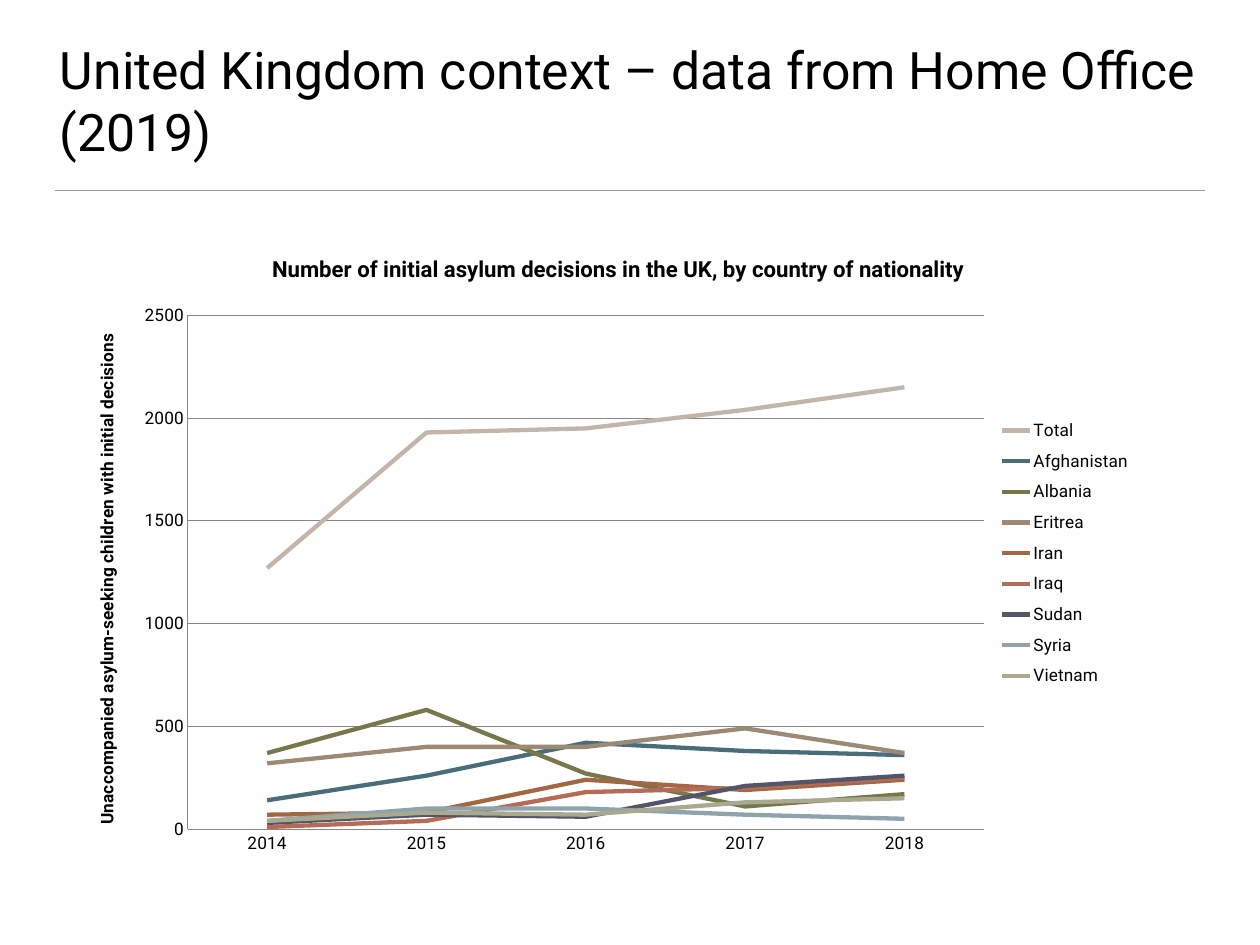
from lxml.etree import SubElement
from pptx import Presentation
from pptx.chart.data import CategoryChartData
from pptx.dml.color import RGBColor
from pptx.enum.chart import XL_CHART_TYPE, XL_LEGEND_POSITION, XL_TICK_MARK
from pptx.enum.text import MSO_ANCHOR
from pptx.oxml import parse_xml
from pptx.oxml.ns import nsdecls, qn
from pptx.util import Cm, Pt

FONT = "Roboto"
COLOURS = {"text": "000000", "rule": "9A9A9A", "grid": "878787"}
TITLE = "United Kingdom context – data from Home Office (2019)"
CHART_TITLE = "Number of initial asylum decisions in the UK, by country of nationality"
AXIS_TITLE = "Unaccompanied asylum-seeking children with initial decisions"
YEARS = ["2014", "2015", "2016", "2017", "2018"]
DECISIONS = [
    ("Total", "C3B5A9", (1270, 1930, 1950, 2040, 2150)),
    ("Afghanistan", "4A6E79", (140, 260, 420, 380, 360)),
    ("Albania", "76774B", (370, 580, 270, 110, 170)),
    ("Eritrea", "9C8A74", (320, 400, 400, 490, 370)),
    ("Iran", "A26843", (70, 80, 240, 190, 240)),
    ("Iraq", "B56B56", (10, 40, 180, 200, 250)),
    ("Sudan", "53556B", (30, 70, 60, 210, 260)),
    ("Syria", "8EA3AB", (40, 100, 100, 70, 50)),
    ("Vietnam", "A9A98F", (40, 80, 70, 130, 150)),
]
LEFT, WIDTH = 1.57, 32.96
PLOT_AREA = {"x": 0.1, "y": 0.13, "w": 0.74, "h": 0.81}
LEGEND_AREA = {"x": 0.85, "y": 0.28, "w": 0.13, "h": 0.45}


def style_font(font, size, bold=False):
    font.name = FONT
    font.size = Pt(size)
    font.bold = bold
    font.color.rgb = RGBColor.from_string(COLOURS["text"])


def write_text(frame, text, size=14, bold=False):
    span = frame.paragraphs[0].add_run()
    span.text = text
    style_font(span.font, size, bold)


def style_line(line, colour, width):
    line.color.rgb = RGBColor.from_string(colour)
    line.width = Pt(width)


def place_part(part, index, area, inner=False):
    for old in part.findall(qn("c:layout")):
        part.remove(old)
    layout = parse_xml(f"<c:layout {nsdecls('c')}><c:manualLayout/></c:layout>")
    settings = {"layoutTarget": "inner"} if inner else {}
    settings.update(xMode="edge", yMode="edge", **area)
    for name, value in settings.items():
        SubElement(layout[0], qn(f"c:{name}")).set("val", str(value))
    part.insert(index, layout)


def add_title(page):
    box = page.shapes.add_textbox(Cm(LEFT), Cm(0.91), Cm(WIDTH), Cm(3.89))
    frame = box.text_frame
    frame.word_wrap = True
    frame.vertical_anchor = MSO_ANCHOR.BOTTOM
    frame.margin_left = frame.margin_right = Cm(0.15)
    frame.margin_top = frame.margin_bottom = Cm(0.15)
    write_text(frame, TITLE, size=42)


def add_rule(page):
    rule = page.shapes.add_connector(1, Cm(LEFT), Cm(5.46), Cm(LEFT + WIDTH), Cm(5.46))
    style_line(rule.line, COLOURS["rule"], 1)
    SubElement(rule.line._get_or_add_ln().getparent(), qn("a:effectLst"))


def add_decisions_chart(page):
    data = CategoryChartData(number_format="0")
    data.categories = YEARS
    for name, colour, values in DECISIONS:
        data.add_series(name, values)
    chart = page.shapes.add_chart(
        XL_CHART_TYPE.LINE, Cm(2.29), Cm(6.68), Cm(30.86), Cm(18.19), data
    ).chart
    style_font(chart.font, 14)
    write_text(chart.chart_title.text_frame, CHART_TITLE, size=18, bold=True)
    chart.plots[0].vary_by_categories = False
    for series, (name, colour, values) in zip(chart.plots[0].series, DECISIONS):
        series.smooth = False
        style_line(series.format.line, colour, 3.5)

    for axis in (chart.category_axis, chart.value_axis):
        axis.major_tick_mark = axis.minor_tick_mark = XL_TICK_MARK.NONE
        style_font(axis.tick_labels.font, 14)
        style_line(axis.format.line, COLOURS["grid"], 0.75)
    scale = chart.value_axis
    scale.minimum_scale, scale.maximum_scale, scale.major_unit = 0, 2500, 500
    scale.tick_labels.number_format = "0"
    scale.tick_labels.number_format_is_linked = False
    style_line(scale.major_gridlines.format.line, COLOURS["grid"], 0.75)
    write_text(scale.axis_title.text_frame, AXIS_TITLE, bold=True)

    chart.has_legend = True
    chart.legend.position = XL_LEGEND_POSITION.RIGHT
    chart.legend.include_in_layout = False
    style_font(chart.legend.font, 14)
    root = chart._chartSpace.find(qn("c:chart"))
    place_part(root.find(qn("c:plotArea")), 0, PLOT_AREA, inner=True)
    place_part(root.find(qn("c:legend")), 1, LEGEND_AREA)


def main():
    deck = Presentation()
    deck.slide_width, deck.slide_height = Cm(36.12), Cm(27.1)
    page = deck.slides.add_slide(deck.slide_layouts[6])
    add_rule(page)
    add_title(page)
    add_decisions_chart(page)
    deck.save("out.pptx")


if __name__ == "__main__":
    main()
